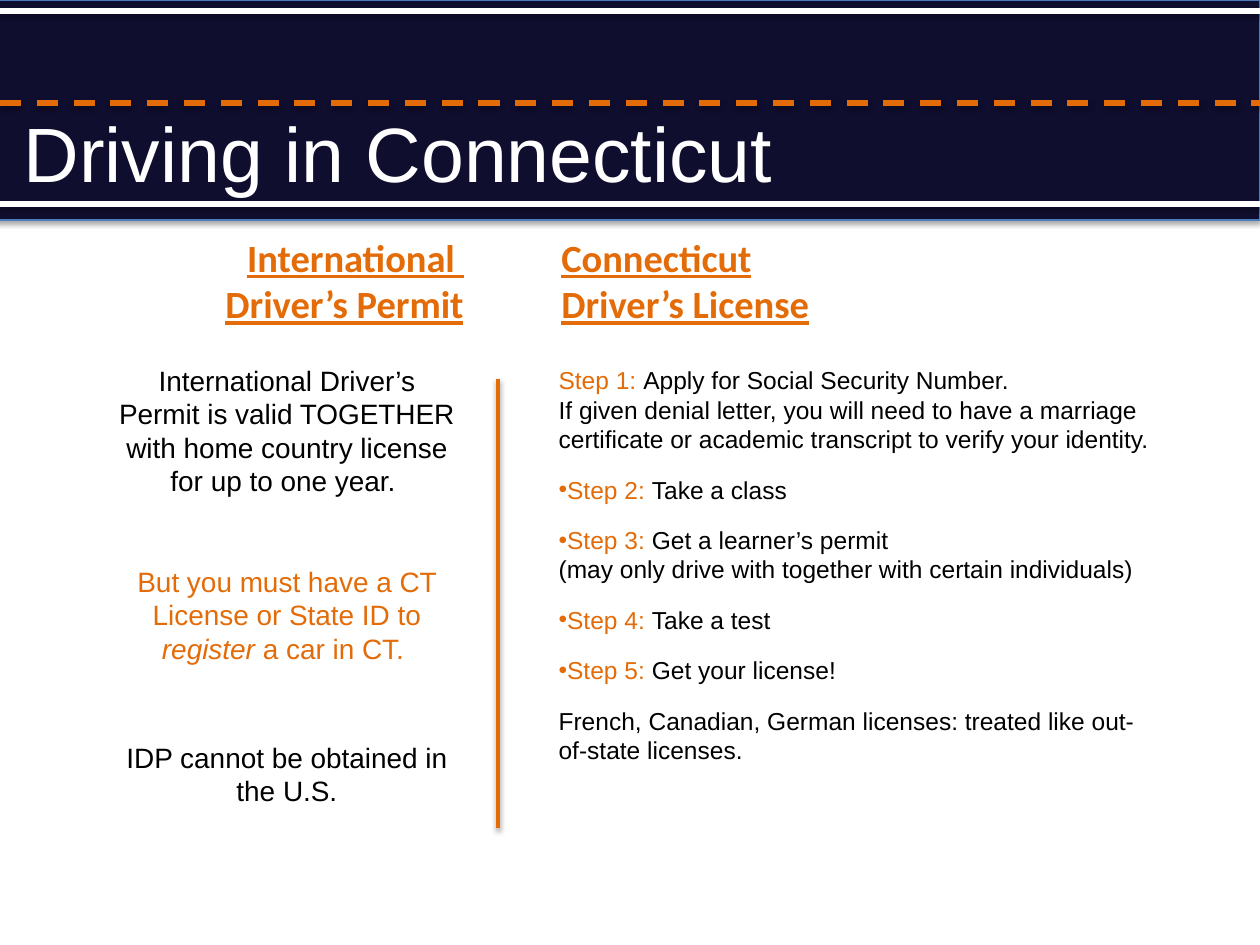
from dataclasses import dataclass

from lxml import etree
from pptx import Presentation
from pptx.dml.color import RGBColor
from pptx.enum.dml import MSO_LINE
from pptx.enum.shapes import MSO_CONNECTOR, MSO_SHAPE
from pptx.enum.text import MSO_ANCHOR, MSO_AUTO_SIZE, PP_ALIGN
from pptx.oxml.ns import qn
from pptx.util import Pt

LEFT, MID, RIGHT = PP_ALIGN.LEFT, PP_ALIGN.CENTER, PP_ALIGN.RIGHT
TOP, BOTTOM = MSO_ANCHOR.TOP, MSO_ANCHOR.BOTTOM
FIXED, GROW = MSO_AUTO_SIZE.NONE, MSO_AUTO_SIZE.SHAPE_TO_FIT_TEXT
RECT, LINE, DASH = MSO_SHAPE.RECTANGLE, MSO_CONNECTOR.STRAIGHT, MSO_LINE.DASH
SCALE = 914400 / 126
WIDE, HIGH = 1260, 945


@dataclass(frozen=True)
class Theme:
    navy: str = "100E2F"
    edge: str = "4A7DBA"
    gold: str = "E36C09"
    white: str = "FFFFFF"
    black: str = "000000"
    sans: str = "Arial"
    head: str = "Calibri"
    title: int = 44
    sub: int = 22
    note: int = 16
    step: int = 14


def emu(*px):
    return [round(n * SCALE) for n in px]


def rgb(code):
    return RGBColor.from_string(code)


class Deck:
    def __init__(self, theme):
        self.theme = theme
        self.file = Presentation()
        self.file.slide_width, self.file.slide_height = emu(WIDE, HIGH)
        self.slide = self.file.slides.add_slide(self.file.slide_layouts[1])
        self.shapes = self.slide.shapes

    def shade(self, shape, alpha):
        props = shape.element.spPr
        for old in props.findall(qn("a:effectLst")):
            props.remove(old)
        effects = etree.SubElement(props, qn("a:effectLst"))
        cast = etree.SubElement(effects, qn("a:outerShdw"), blurRad=str(Pt(3.1)),
                                dist=str(Pt(1.7)), dir="5400000", rotWithShape="0")
        tint = etree.SubElement(cast, qn("a:srgbClr"), val=self.theme.black)
        etree.SubElement(tint, qn("a:alpha"), val=str(alpha * 1000))

    def band(self, box):
        shape = self.shapes.add_shape(RECT, *emu(*box))
        shape.fill.solid()
        shape.fill.fore_color.rgb = rgb(self.theme.navy)
        shape.line.color.rgb = rgb(self.theme.edge)
        shape.line.width = Pt(0.75)
        self.shade(shape, 35)
        self.shapes.element.insert(2, shape.element)

    def rule(self, ends, color, width, dash=None):
        line = self.shapes.add_connector(LINE, *emu(*ends))
        line.line.color.rgb = rgb(color)
        line.line.width = Pt(width)
        if dash:
            line.line.dash_style = dash
        self.shade(line, 38)

    def frame(self, shape, box, fit=FIXED, anchor=TOP):
        shape.left, shape.top, shape.width, shape.height = emu(*box)
        text = shape.text_frame
        text.word_wrap, text.auto_size = True, fit
        text.vertical_anchor = anchor
        return text

    def para(self, text, runs, size, align=LEFT, gap=0, font=None, strong=False):
        first = text.paragraphs[0]
        para = text.add_paragraph() if first.runs else first
        para.alignment, para.space_before = align, Pt(gap)
        for words, color, *slant in runs:
            for row, part in enumerate(words.split("\n")):
                if row:
                    para.add_line_break()
                run = para.add_run()
                run.text = part
                run.font.name = font or self.theme.sans
                run.font.size = Pt(size)
                run.font.color.rgb = rgb(color)
                run.font.bold = run.font.underline = strong
                run.font.italic = bool(slant)
        return para

    def bullet(self, para, color=None):
        props = para._p.get_or_add_pPr()
        props.set("marL", "0")
        props.set("indent", "-91440" if color else "0")
        if color:
            paint = etree.SubElement(props, qn("a:buClr"))
            etree.SubElement(paint, qn("a:srgbClr"), val=color)
            etree.SubElement(props, qn("a:buChar"), char="•")
        else:
            etree.SubElement(props, qn("a:buNone"))

    def title(self, box, words):
        text = self.frame(self.shapes.title, box, anchor=BOTTOM)
        self.para(text, [(words, self.theme.white)], self.theme.title)

    def steps(self, box, items):
        text = self.frame(self.slide.placeholders[1], box)
        for row, (runs, mark) in enumerate(items):
            para = self.para(text, runs, self.theme.step, gap=12 if row else 0)
            self.bullet(para, self.theme.gold if mark else None)

    def notes(self, box, items):
        text = self.frame(self.shapes.add_textbox(0, 0, 0, 0), box, GROW)
        for gap, runs in items:
            self.para(text, runs, self.theme.note, MID, gap)

    def label(self, box, words, align):
        text = self.frame(self.shapes.add_textbox(0, 0, 0, 0), box, GROW)
        self.para(text, [(words, self.theme.gold)], self.theme.sub, align,
                  font=self.theme.head, strong=True)


def main():
    theme = Theme()
    gold, black, white = theme.gold, theme.black, theme.white
    deck = Deck(theme)
    deck.band((-5, 0, 1265, 220))
    deck.title((11, 103, 975, 101), "Driving in Connecticut")

    tasks = [
        "Apply for Social Security Number. \nIf given denial letter, you will need to "
        "have a marriage certificate or academic transcript to verify your identity.",
        "Take a class",
        "Get a learner’s permit \n(may only drive with together with certain individuals)",
        "Take a test",
        "Get your license!",
    ]
    items = [([(f"Step {n}: ", gold), (task, black)], n > 1)
             for n, task in enumerate(tasks, 1)]
    last = "French, Canadian, German licenses: treated like out-of-state licenses."
    items.append(([(last, black)], False))
    deck.steps((546, 359, 616, 599), items)

    deck.notes((103, 357, 368, 471), [
        (0, [("International Driver’s Permit is valid TOGETHER with home country "
              "license for up to one year. ", black)]),
        (38, [("But you must have a CT License or State ID to ", gold),
              ("register ", gold, True), ("a car in CT. ", gold)]),
        (43, [("IDP cannot be obtained in the U.S.", black)]),
    ])

    deck.rule((0, 103, WIDE, 103), gold, 3, DASH)
    for y in (204, 11):
        deck.rule((0, y, WIDE, y), white, 3)
    deck.label((118, 228, 358, 106), "International \nDriver’s Permit", RIGHT)
    deck.label((549, 228, 358, 106), "Connecticut\nDriver’s License", LEFT)
    deck.rule((498, 379, 498, 828), gold, 2)
    deck.file.save("out.pptx")


if __name__ == "__main__":
    main()
